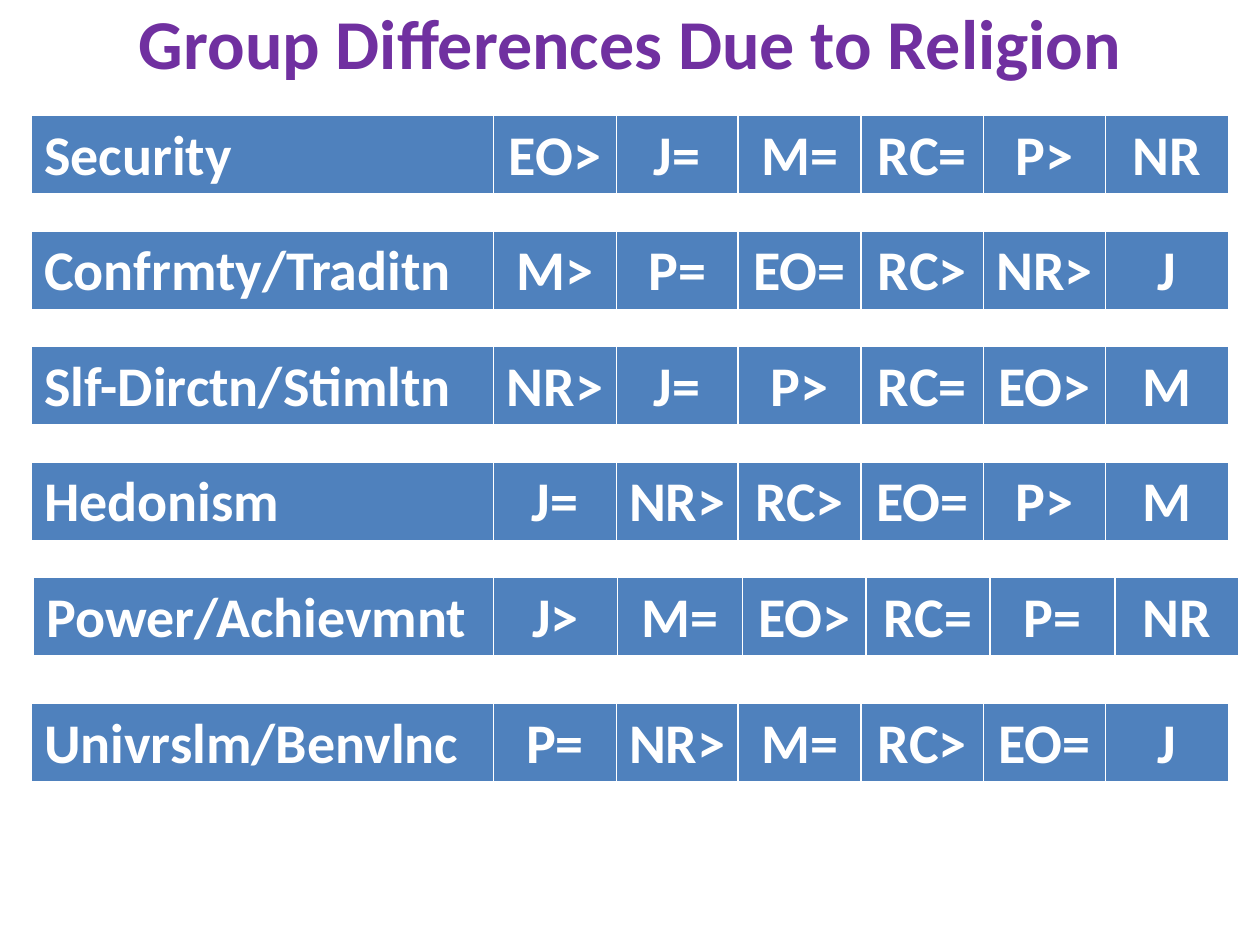
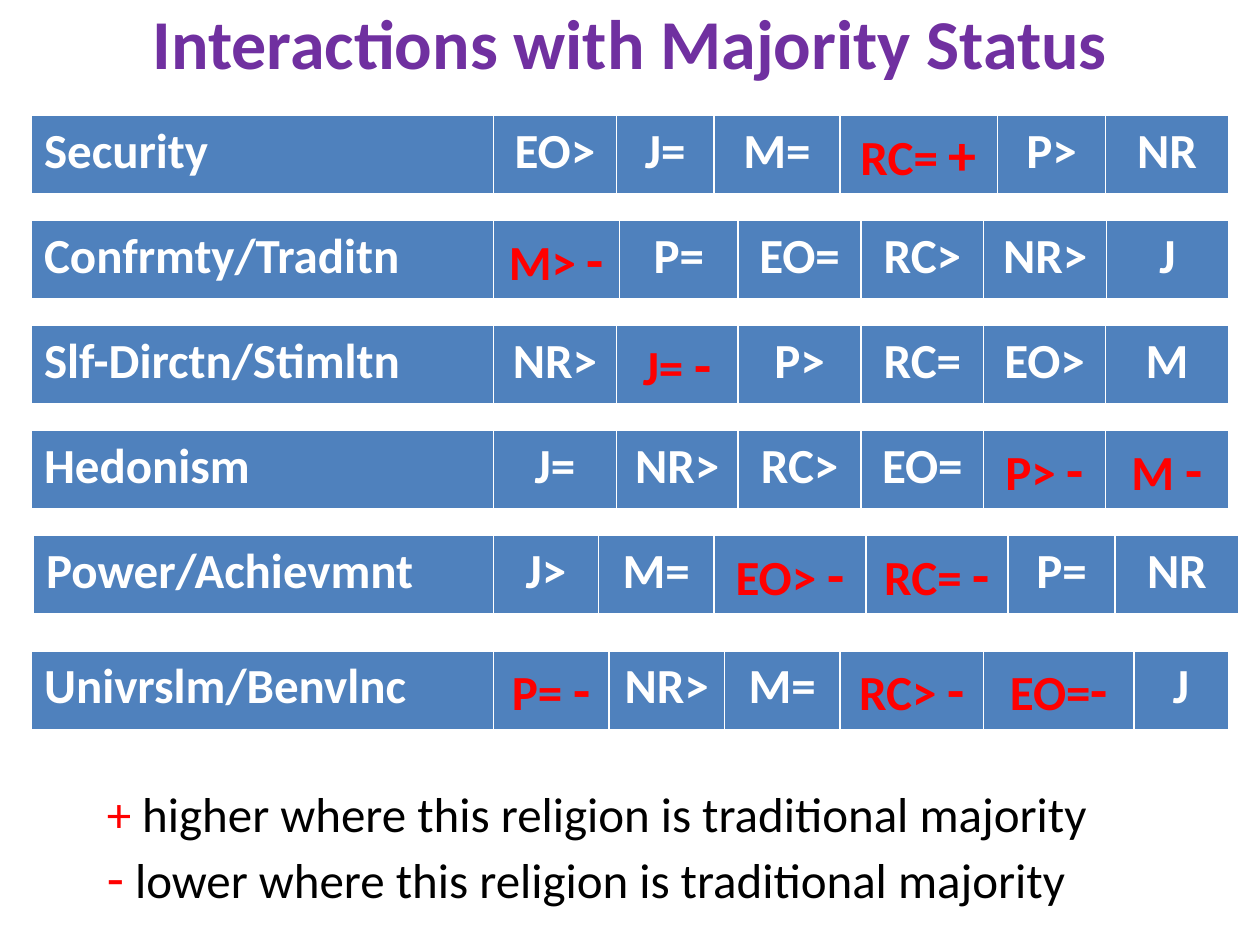
from itertools import pairwise

from lxml.etree import SubElement
from pptx import Presentation
from pptx.dml.color import RGBColor
from pptx.enum.text import MSO_ANCHOR as Anchor, PP_ALIGN as Align
from pptx.oxml.ns import qn
from pptx.util import Pt

EMU_PER_PX = 7620
WHITE, BLUE, PURPLE, RED, BLACK = "FFFFFF", "4F81BD", "7030A0", "FF0000", "000000"
FONT = "Calibri"
MARK_SIZE = 32
ROW_HEIGHT = 76
BORDERS = {"lnL": 1, "lnR": 1, "lnT": 1, "lnB": 3}

RELIGION_ROWS = [
    ("Security", "EO> J= M= RC= P> NR"),
    ("Confrmty/Traditn", "M> P= EO= RC> NR> J"),
    ("Slf-Dirctn/Stimltn", "NR> J= P> RC= EO> M"),
    ("Hedonism", "J= NR> RC> EO= P> M"),
    ("Power/Achievmnt", "J> M= EO> RC= P= NR"),
    ("Univrslm/Benvlnc", "P= NR> M= RC> EO= J"),
]
MAJORITY_ROWS = [
    ("Security", "EO>,J=,M=,RC= +,P>,NR", [117, 93, 120, 150, 103, 117]),
    ("Confrmty/Traditn", "M> -,P=,EO=,RC>,NR>,J", [120, 113, 117, 117, 117, 116]),
    ("Slf-Dirctn/Stimltn", "NR>,J= -,P>,RC=,EO>,M", None),
    ("Hedonism", "J=,NR>,RC>,EO=,P> -,M -", None),
    ("Power/Achievmnt", "J>,M=,EO> -,RC= -,P=,NR", [100, 110, 145, 135, 102, 118]),
    ("Univrslm/Benvlnc", "P= -,NR>,M=,RC> -,EO=-,J", [110, 110, 110, 137, 143, 90]),
]
LEGEND = [
    ("+", 28, " higher where this religion is traditional majority"),
    ("-", MARK_SIZE, " lower where this religion is traditional majority"),
]


def px(*lengths):
    return [length * EMU_PER_PX for length in lengths]


def rgb(color):
    return RGBColor.from_string(color)


def add_run(paragraph, text, size, color, bold=True):
    run = paragraph.add_run()
    run.text = text
    for name, value in {"name": FONT, "size": Pt(size), "bold": bold}.items():
        setattr(run.font, name, value)
    run.font.color.rgb = rgb(color)


def add_text_box(slide, left, top, width, height):
    frame = slide.shapes.add_textbox(*px(left, top, width, height)).text_frame
    frame.word_wrap = True
    return frame


def add_title(slide, text):
    frame = add_text_box(slide, 60, -20, 1080, 120)
    frame.vertical_anchor = Anchor.MIDDLE
    paragraph = frame.paragraphs[0]
    paragraph.alignment = Align.CENTER
    add_run(paragraph, text, 40, PURPLE)


def style_cell(cell):
    properties = cell._tc.get_or_add_tcPr()
    for tag, width in BORDERS.items():
        line = SubElement(properties, qn(f"a:{tag}"), w=str(Pt(width)))
        fill = SubElement(line, qn("a:solidFill"))
        SubElement(fill, qn("a:srgbClr"), val=WHITE)
    cell.fill.solid()
    cell.fill.fore_color.rgb = rgb(BLUE)


def fill_cell(cell, text, size, alignment):
    style_cell(cell)
    paragraph = cell.text_frame.paragraphs[0]
    paragraph.alignment = alignment
    if text[-1] in "+-":
        add_run(paragraph, text[:-1], size, RED)
        add_run(paragraph, text[-1], MARK_SIZE, RED)
    else:
        add_run(paragraph, text, size, WHITE)


def even_widths(total, count):
    edges = [round(total * index / count) for index in range(count + 1)]
    return [end - start for start, end in pairwise(edges)]


def add_value_row(slide, top, label, groups, size, group_widths=None):
    wide = label == "Power/Achievmnt"
    left, label_width, groups_width = (32, 438, 710) if wide else (30, 440, 700)
    widths = [label_width, *(group_widths or even_widths(groups_width, len(groups)))]
    frame = slide.shapes.add_table(1, len(widths), *px(left, top, sum(widths), ROW_HEIGHT))
    table = frame.table
    table.horz_banding = False
    for index, (width, text) in enumerate(zip(px(*widths), [label, *groups])):
        table.columns[index].width = width
        fill_cell(table.cell(0, index), text, size, Align.CENTER if index else Align.LEFT)


def row_tops(step, last_top):
    return [*range(110, 110 + 5 * step, step), last_top]


def add_legend(slide):
    frame = add_text_box(slide, 90, 740, 1020, 133)
    for index, (mark, size, meaning) in enumerate(LEGEND):
        paragraph = frame.add_paragraph() if index else frame.paragraphs[0]
        add_run(paragraph, mark, size, RED, bold=False)
        add_run(paragraph, meaning, 28, BLACK, bold=False)


def add_titled_slide(presentation, title):
    slide = presentation.slides.add_slide(presentation.slide_layouts[6])
    add_title(slide, title)
    return slide


def main():
    presentation = Presentation()
    presentation.slide_width, presentation.slide_height = px(1200, 900)

    slide = add_titled_slide(presentation, "Group Differences Due to Religion")
    for top, (label, groups) in zip(row_tops(110, 670), RELIGION_ROWS):
        add_value_row(slide, top, label, groups.split(), 32)

    slide = add_titled_slide(presentation, "Interactions with Majority Status")
    for top, (label, groups, widths) in zip(row_tops(100, 620), MAJORITY_ROWS):
        add_value_row(slide, top, label, groups.split(","), 28, widths)
    add_legend(slide)

    presentation.save("out.pptx")


if __name__ == "__main__":
    main()
